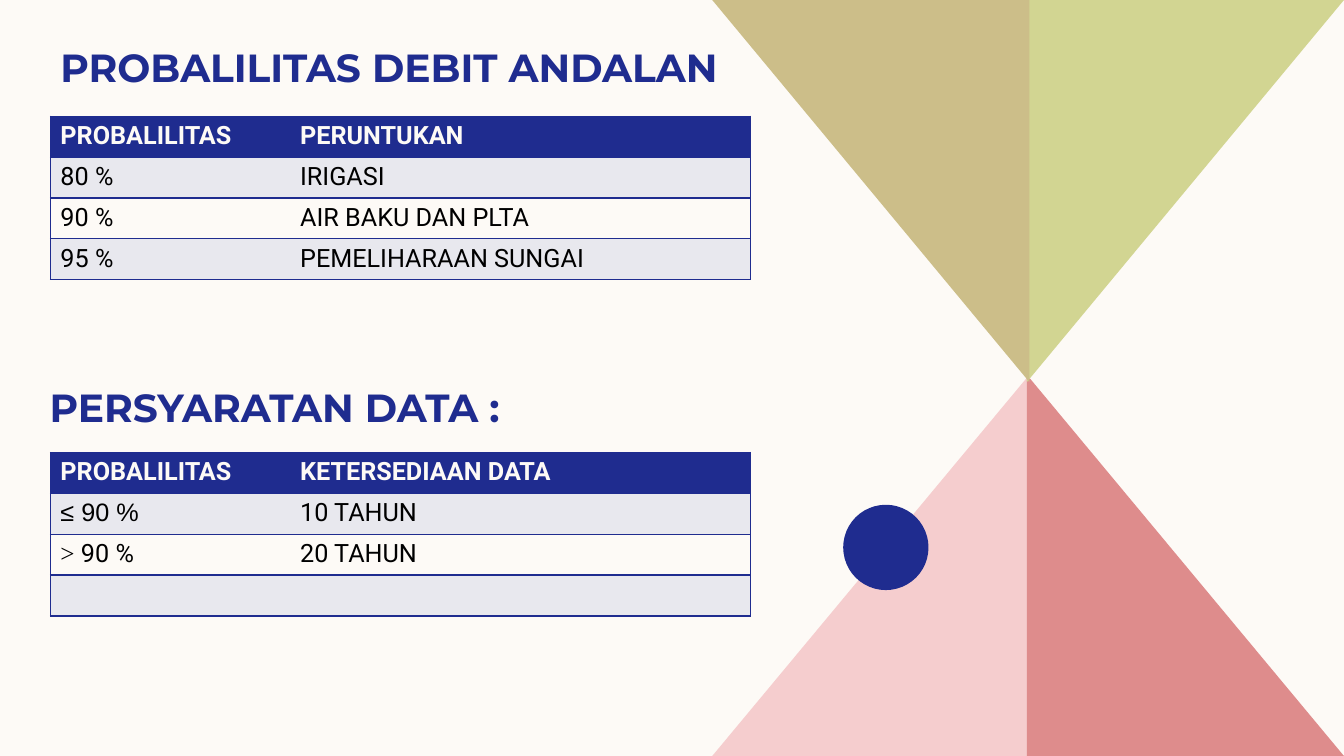
from dataclasses import dataclass

from lxml.etree import SubElement
from pptx import Presentation
from pptx.dml.color import RGBColor
from pptx.enum.shapes import MSO_SHAPE
from pptx.enum.text import MSO_ANCHOR
from pptx.oxml.ns import qn
from pptx.util import Cm, Pt


@dataclass(frozen=True)
class Theme:
    paper: str = "FDFAF6"
    navy: str = "1F2C8F"
    band: str = "E8E8EE"
    ink: str = "000000"
    pink: str = "F5CDCE"
    rose: str = "DE8C8C"
    lime: str = "D2D592"
    sand: str = "CCBE89"
    head: str = "Montserrat"
    body: str = "Roboto"
    big: int = 28
    small: int = 18


THEME = Theme()


def color(code):
    return RGBColor.from_string(code)


def style(run, font, size, code, bold):
    run.font.name = font
    run.font.size = Pt(size)
    run.font.color.rgb = color(code)
    run.font.bold = bold


def paint(shape, code):
    shape.fill.solid()
    shape.fill.fore_color.rgb = color(code)
    shape.line.fill.background()
    shape.shadow.inherit = False


# Right-hand art: four right triangles meeting at a point, and a dot
def add_art(slide, left, top, width, height):
    mid = left + width / 2
    lap = 0.03
    foot = top + height
    low, high = top + height / 2 - 0.08, top + height / 2 + 0.1
    parts = [
        (mid + lap, left, low, foot, THEME.pink),
        (mid - lap, left + width, low, foot, THEME.rose),
        (mid - lap, left + width, high, top, THEME.lime),
        (mid + lap, left, high, top, THEME.sand),
    ]
    for axis, side, tip, base, code in parts:
        path = slide.shapes.build_freeform(Cm(axis), Cm(tip))
        path.add_line_segments([(Cm(side), Cm(base)), (Cm(axis), Cm(base))])
        paint(path.convert_to_shape(), code)
    dot = slide.shapes.add_shape(
        MSO_SHAPE.OVAL, Cm(left + 3.3), Cm(top + 12.72), Cm(2.15), Cm(2.15))
    paint(dot, THEME.navy)


# Section heading
def add_head(slide, text, left, top, width, height):
    box = slide.shapes.add_textbox(Cm(left), Cm(top), Cm(width), Cm(height))
    frame = box.text_frame
    frame.word_wrap = True
    frame.vertical_anchor = MSO_ANCHOR.BOTTOM
    frame.text = text
    style(frame.paragraphs[0].runs[0], THEME.head, THEME.big, THEME.navy, True)


def add_edges(cell, sides):
    props = cell._tc.get_or_add_tcPr()
    for side in "LRTB":
        line = SubElement(props, qn(f"a:ln{side}"), w=str(Pt(1)))
        if side in sides:
            fill = SubElement(line, qn("a:solidFill"))
            SubElement(fill, qn("a:srgbClr"), val=THEME.navy)
        else:
            SubElement(line, qn("a:noFill"))


# Banded table; a cell is a list of (text, font) pieces
def add_grid(slide, rows, left, top, width, height):
    grid = slide.shapes.add_table(
        len(rows), 2, Cm(left), Cm(top), Cm(width), Cm(height)).table
    grid.first_row = grid.horz_banding = False
    first = 6.04
    grid.columns[0].width = Cm(first)
    grid.columns[1].width = Cm(width - first)
    for r, row in enumerate(rows):
        top_row = r == 0
        back = THEME.navy if top_row else THEME.band if r % 2 else THEME.paper
        ink = THEME.paper if top_row else THEME.ink
        for c, pieces in enumerate(row):
            cell = grid.cell(r, c)
            add_edges(cell, "RTB" if c else "LTB")
            cell.fill.solid()
            cell.fill.fore_color.rgb = color(back)
            para = cell.text_frame.paragraphs[0]
            for text, font in pieces:
                run = para.add_run()
                run.text = text
                style(run, font, THEME.small, ink, top_row)


def plain(*texts):
    return [[(text, THEME.body)] for text in texts]


def main():
    deck = Presentation()
    deck.slide_width, deck.slide_height = Cm(33.87), Cm(19.05)
    slide = deck.slides.add_slide(deck.slide_layouts[6])
    slide.background.fill.solid()
    slide.background.fill.fore_color.rgb = color(THEME.paper)

    add_art(slide, 17.95, 0, 15.92, 19.05)

    uses = [
        plain("PROBALILITAS", "PERUNTUKAN"),
        plain("80 %", "IRIGASI"),
        plain("90 %", "AIR BAKU DAN PLTA"),
        plain("95 %", "PEMELIHARAAN SUNGAI"),
    ]
    needs = [
        plain("PROBALILITAS", "KETERSEDIAAN DATA"),
        [[("≤ 90 %", "Arial")], *plain("10 TAHUN")],
        [[("> ", "Times New Roman"), ("90 %", THEME.body)], *plain("20 TAHUN")],
        [[], []],
    ]
    add_grid(slide, uses, 1.27, 2.93, 17.64, 4.12)
    add_grid(slide, needs, 1.27, 11.4, 17.64, 4.12)
    add_head(slide, "PROBALILITAS DEBIT ANDALAN", 1.27, 0.28, 22.05, 2.13)
    add_head(slide, "PERSYARATAN DATA :", 1, 8.84, 22.05, 2.13)

    deck.save("out.pptx")


if __name__ == "__main__":
    main()
